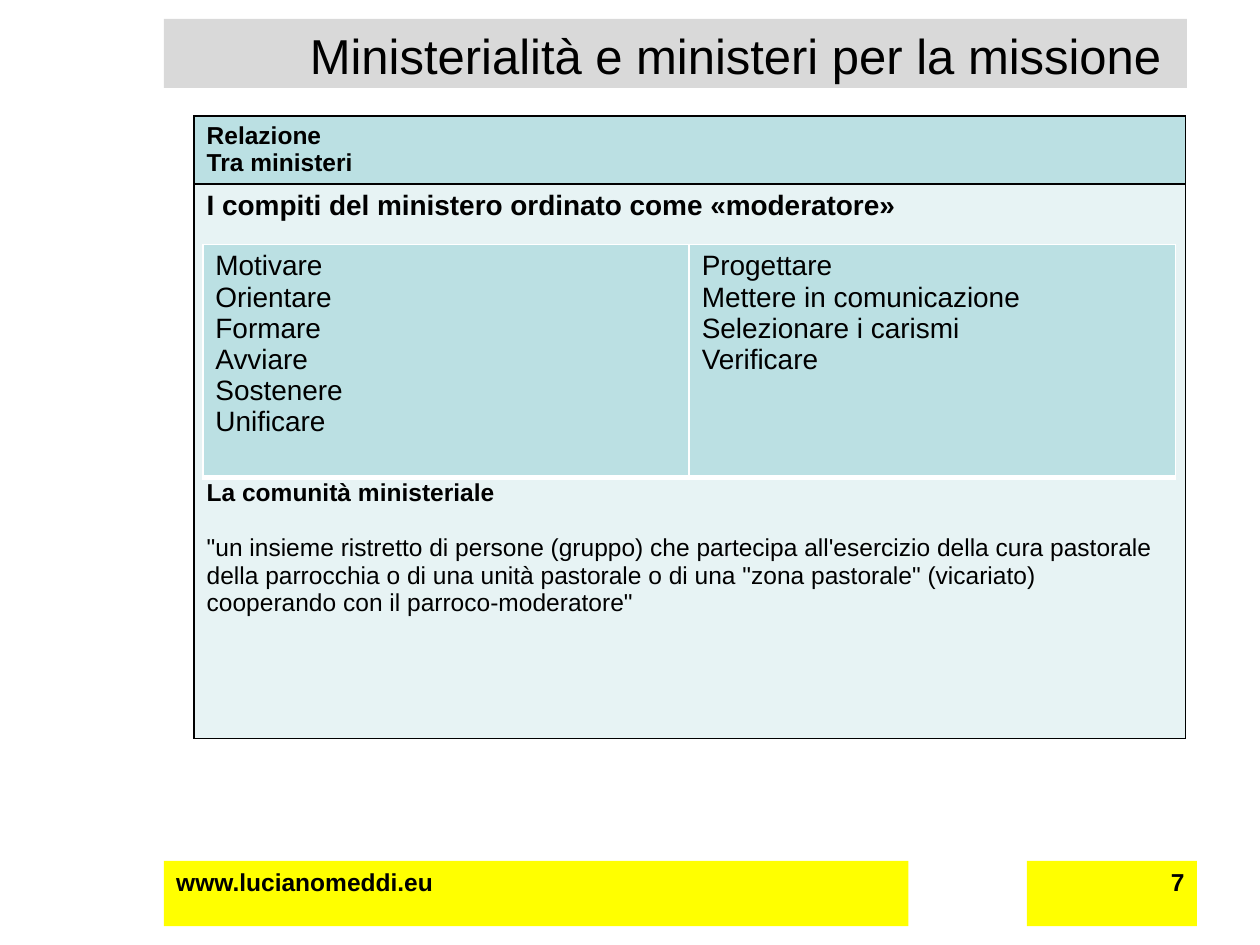
from pptx import Presentation
from pptx.dml.color import RGBColor
from pptx.enum.shapes import MSO_SHAPE
from pptx.enum.text import PP_ALIGN
from pptx.oxml import parse_xml
from pptx.oxml.ns import nsdecls
from pptx.util import Inches, Pt

WIDTH, HEIGHT = Inches(10), Inches(7.5)
COLORS = {
    "text": "000000", "title": "D9D9D9", "footer": "FFFF00",
    "head": "BBE0E3", "body": "E7F3F4", "frame": "000000", "inner": "FFFFFF",
}
FOOTER_TOP, FOOTER_HEIGHT = 0.911, 0.069
TASKS = [
    ["Motivare", "Orientare", "Formare", "Avviare", "Sostenere", "Unificare"],
    ["Progettare", "Mettere in comunicazione", "Selezionare i carismi", "Verificare"],
]
QUOTE = (
    '"un insieme ristretto di persone (gruppo) che partecipa all\'esercizio della cura '
    'pastorale della parrocchia o di una unità pastorale o di una "zona pastorale" '
    '(vicariato) cooperando con il parroco-moderatore"'
)


def area(left, top, width, height):
    """Turn shares of the slide into lengths."""
    return (int(left * WIDTH), int(top * HEIGHT), int(width * WIDTH), int(height * HEIGHT))


def write(frame, lines, align=PP_ALIGN.LEFT):
    """Fill a text frame with (text, size, bold, space before) lines."""
    frame.word_wrap = True
    for index, (text, size, bold, gap) in enumerate(lines):
        para = frame.add_paragraph() if index else frame.paragraphs[0]
        para.text = text
        para.alignment = align
        para.space_before = Pt(gap)
        para.font.name = "Arial"
        para.font.size = Pt(size)
        para.font.bold = bold
        para.font.color.rgb = RGBColor.from_string(COLORS["text"])


def add_bar(page, box, color, line, align=PP_ALIGN.LEFT, anchor="top"):
    bar = page.shapes.add_shape(MSO_SHAPE.RECTANGLE, *box)
    bar.shadow.inherit = False
    bar.fill.solid()
    bar.fill.fore_color.rgb = RGBColor.from_string(COLORS[color])
    bar.line.fill.background()
    write(bar.text_frame, [line], align)
    bar.text_frame._txBody.bodyPr.set("anchor", "t")


def add_grid(page, box, heights, columns):
    """Add an unbanded table with equal columns and the given row shares."""
    table = page.shapes.add_table(len(heights), columns, *box).table
    table.first_row = table.horz_banding = False
    for row, share in zip(table.rows, heights):
        row.height = int(box[3] * share)
    return table


def style_cell(cell, fill, border, bottom=1):
    cell.fill.solid()
    cell.fill.fore_color.rgb = RGBColor.from_string(COLORS[fill])
    properties = cell._tc.get_or_add_tcPr()
    for position, side in enumerate("LRTB"):
        points = bottom if side == "B" else 1
        properties.insert(position, parse_xml(
            f'<a:ln{side} {nsdecls("a")} w="{Pt(points)}"><a:solidFill>'
            f'<a:srgbClr val="{COLORS[border]}"/></a:solidFill></a:ln{side}>'))


def add_ministry_table(page, box):
    table = add_grid(page, box, (0.11, 0.89), 1)
    rows = [
        ("head", [("Relazione", 14, True, 0), ("Tra ministeri", 14, True, 0)]),
        ("body", [
            ("I compiti del ministero ordinato come «moderatore»", 16, True, 0),
            ("La comunità ministeriale", 14, True, 147),
            (QUOTE, 14, False, 16),
        ]),
    ]
    for index, (fill, lines) in enumerate(rows):
        cell = table.cell(index, 0)
        style_cell(cell, fill, "frame")
        write(cell.text_frame, lines)


def add_task_table(page, box):
    table = add_grid(page, box, (1,), len(TASKS))
    for column, tasks in enumerate(TASKS):
        cell = table.cell(0, column)
        style_cell(cell, "head", "inner", bottom=3)
        write(cell.text_frame, [(task, 16, False, 0) for task in tasks])


def add_footer(page):
    add_bar(page, area(0.13, FOOTER_TOP, 0.591, FOOTER_HEIGHT), "footer",
            ("www.lucianomeddi.eu", 14, True, 0))
    add_bar(page, area(0.815, FOOTER_TOP, 0.135, FOOTER_HEIGHT), "footer",
            ("7", 14, True, 0), PP_ALIGN.RIGHT)


def main():
    deck = Presentation()
    deck.slide_width, deck.slide_height = WIDTH, HEIGHT
    page = deck.slides.add_slide(deck.slide_layouts[6])
    add_footer(page)
    add_ministry_table(page, area(0.154, 0.1225, 0.787, 0.659))
    add_bar(page, area(0.13, 0.02, 0.812, 0.073), "title",
            ("Ministerialità e ministeri per la missione ", 28, False, 0), PP_ALIGN.RIGHT)
    add_task_table(page, area(0.161, 0.2587, 0.772, 0.2467))
    deck.save("out.pptx")


if __name__ == "__main__":
    main()
